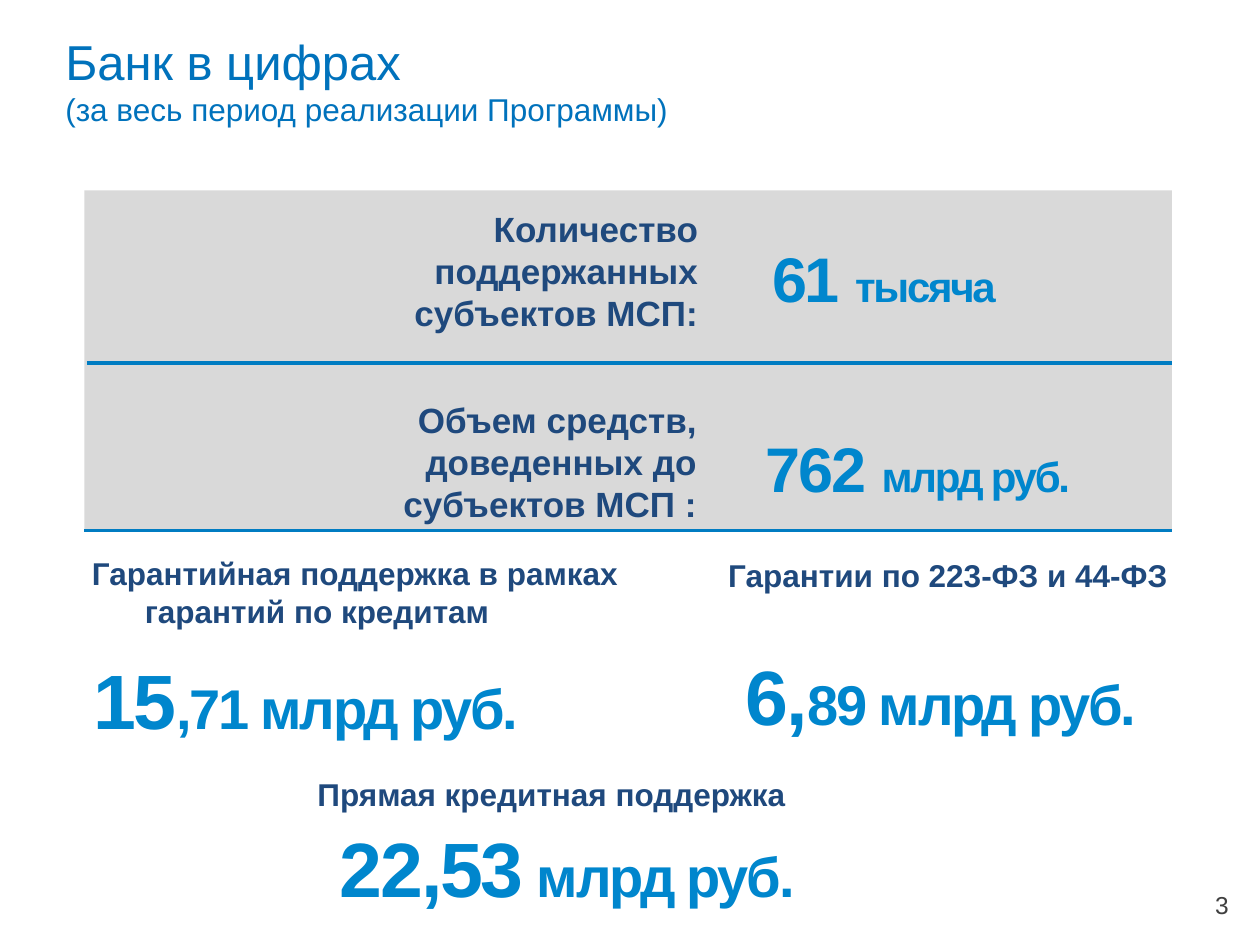
from dataclasses import dataclass

from lxml import etree
from pptx import Presentation
from pptx import util as u
from pptx.dml.color import RGBColor
from pptx.enum import shapes, text
from pptx.oxml.ns import qn


@dataclass(frozen=True)
class Theme:
    font: str = "Arial"
    title: str = "0072BC"
    label: str = "1F497D"
    figure: str = "0086CD"
    panel: str = "D9D9D9"
    rule: str = "007CC2"
    page: str = "404040"
    title_size: int = 28
    body_size: int = 18
    panel_label_size: int = 20
    panel_figure: tuple = (36, 24)
    large_figure: tuple = (44, 32)
    page_size: int = 14
    rule_width: int = 2
    tracking: int = -130  # hundredths of a point


THEME = Theme()
LABEL_INSETS = {"margin_left": 0.08, "margin_right": 0.08,
                "margin_top": 0.04, "margin_bottom": 0.04}


def apply_format(target, values):
    for name, value in values.items():
        setattr(target, name, value)


def add_text(slide, box, pieces, color, bold=False, tracking=None, **frame_format):
    """Place one paragraph made of (wording, size) pieces and return it."""
    frame = slide.shapes.add_textbox(*map(u.Inches, box)).text_frame
    apply_format(frame, {"word_wrap": True, **frame_format})
    paragraph = frame.paragraphs[0]
    for wording, size in pieces:
        if wording == "\n":
            paragraph.add_line_break()
            continue
        run = paragraph.add_run()
        run.text = wording
        apply_format(run.font, {"name": THEME.font, "size": u.Pt(size), "bold": bold})
        run.font.color.rgb = RGBColor.from_string(color)
        if tracking is not None:
            run._r.get_or_add_rPr().set("spc", str(tracking))
    return paragraph


def add_label(slide, box, wording, size, align=text.PP_ALIGN.LEFT):
    insets = {name: u.Inches(value) for name, value in LABEL_INSETS.items()}
    paragraph = add_text(slide, box, [(wording, size)], THEME.label, bold=True,
                         auto_size=text.MSO_AUTO_SIZE.SHAPE_TO_FIT_TEXT, **insets)
    paragraph.alignment = align
    # Hanging indent for the wrapped lines
    properties = paragraph._p.get_or_add_pPr()
    hang = u.Inches(0.42)
    properties.set("marL", str(hang))
    properties.set("indent", str(-hang))


def add_figure(slide, box, number, unit, sizes, anchor=text.MSO_ANCHOR.TOP):
    add_text(slide, box, zip((number, unit), sizes), THEME.figure, bold=True,
             tracking=THEME.tracking, vertical_anchor=anchor,
             auto_size=text.MSO_AUTO_SIZE.SHAPE_TO_FIT_TEXT)


def add_panel(slide, left, top, width, height):
    panel = slide.shapes.add_shape(shapes.MSO_SHAPE.RECTANGLE,
                                   *map(u.Inches, (left, top, width, height)))
    panel.rotation = 180
    panel.shadow.inherit = False
    panel.fill.solid()
    panel.fill.fore_color.rgb = RGBColor.from_string(THEME.panel)
    panel.line.fill.background()


def add_rule(slide, left, right, y):
    rule = slide.shapes.add_connector(shapes.MSO_CONNECTOR.STRAIGHT,
                                      *map(u.Inches, (left, y, right, y)))
    rule.line.width = u.Pt(THEME.rule_width)
    rule.line.color.rgb = RGBColor.from_string(THEME.rule)
    etree.SubElement(rule._element.spPr, qn("a:effectLst"))


def main():
    deck = Presentation()
    deck.slide_width, deck.slide_height = u.Inches(10), u.Inches(7.5)
    slide = deck.slides.add_slide(deck.slide_layouts[6])

    # Page number and heading
    page = add_text(slide, (7.52, 6.98, 2.33, 0.4), [("3", THEME.page_size)],
                    THEME.page, vertical_anchor=text.MSO_ANCHOR.MIDDLE)
    page.alignment = text.PP_ALIGN.RIGHT
    add_text(slide, (0.42, 0.2, 7.02, 0.95),
             [("Банк в цифрах", THEME.title_size), ("\n", None),
              ("(за весь период реализации Программы)", THEME.body_size)], THEME.title)

    # Grey panel with the two programme totals
    add_panel(slide, 0.67, 1.51, 8.63, 2.7)
    totals = [
        ((1.72, 1.61, 3.9, 1.09), "Количество поддержанных субъектов МСП:",
         (6.03, 1.84, 3.06, 0.71), "61 ", "тысяча"),
        ((1.71, 3.12, 3.9, 1.09), "Объем средств, доведенных до субъектов МСП :",
         (5.98, 3.35, 3.32, 0.71), "762 ", "млрд руб."),
    ]
    for label_box, label, figure_box, number, unit in totals:
        add_label(slide, label_box, label, THEME.panel_label_size, text.PP_ALIGN.RIGHT)
        add_figure(slide, figure_box, number, unit, THEME.panel_figure,
                   text.MSO_ANCHOR.BOTTOM)
    for left, y in ((0.69, 2.88), (0.67, 4.21)):
        add_rule(slide, left, 9.3, y)

    # Kinds of support below the panel
    supports = [
        ((0.65, 4.36, 4.93, 0.69), "Гарантийная поддержка в рамках гарантий по кредитам",
         (0.64, 5.13, 4.03, 0.84), "15", ",71 млрд руб."),
        ((5.7, 4.37, 3.87, 0.39), "Гарантии по 223-ФЗ и 44-ФЗ",
         (5.82, 5.1, 3.75, 0.84), "6,", "89 млрд руб."),
        ((2.44, 6.11, 4.93, 0.39), "Прямая кредитная поддержка",
         (2.6, 6.46, 4.03, 0.84), "22,53", " млрд руб."),
    ]
    for label_box, label, figure_box, number, unit in supports:
        add_label(slide, label_box, label, THEME.body_size)
        add_figure(slide, figure_box, number, unit, THEME.large_figure)

    deck.save("out.pptx")


if __name__ == "__main__":
    main()
